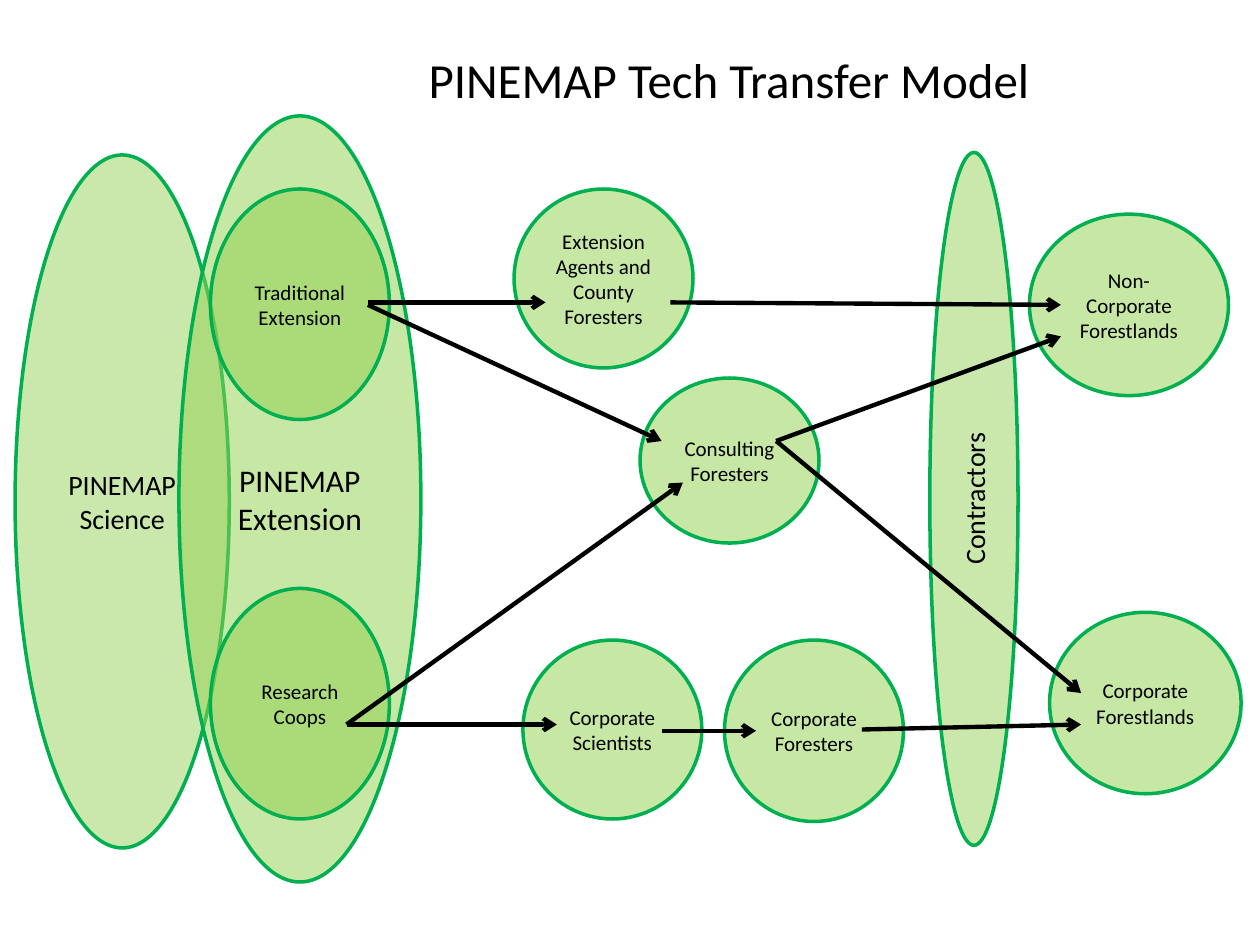
from lxml.etree import SubElement
from pptx import Presentation
from pptx.dml.color import RGBColor
from pptx.enum.shapes import MSO_CONNECTOR, MSO_SHAPE
from pptx.enum.text import MSO_ANCHOR, PP_ALIGN
from pptx.oxml.ns import qn
from pptx.util import Inches, Pt

COLORS = {"leaf": "92D050", "edge": "00B050", "ink": "000000"}
COLUMNS, ROWS = 10, 7.5


def rgb(name):
    return RGBColor.from_string(COLORS[name])


def write(sp, text, size=12, color="ink", font="Calibri", vert=None):
    tf = sp.text_frame
    tf.word_wrap = True
    tf.vertical_anchor = MSO_ANCHOR.MIDDLE
    if vert:
        tf._txBody.bodyPr.set("vert", vert)
    p = tf.paragraphs[0]
    p.alignment = PP_ALIGN.CENTER
    r = p.add_run()
    r.text = text
    r.font.size = Pt(size)
    r.font.name = font
    r.font.color.rgb = rgb(color)


class Diagram:
    """Style and current slide; lengths are grid columns and rows."""

    def __init__(self, prs):
        self.slide = prs.slides.add_slide(prs.slide_layouts[6])
        self.col = prs.slide_width / COLUMNS
        self.row = prs.slide_height / ROWS
        self.edge_width = Pt(2)
        self.arrow_width = Pt(2.5)

    def place(self, x, y):
        return round(x * self.col), round(y * self.row)

    def title(self, text, x, y, w, h, size=28):
        sp = self.slide.shapes.add_textbox(*self.place(x, y), *self.place(w, h))
        write(sp, text, size=size)

    def ellipse(self, text, x, y, w, h, opacity=51, **style):
        sp = self.slide.shapes.add_shape(
            MSO_SHAPE.OVAL, *self.place(x, y), *self.place(w, h))
        sp.shadow.inherit = False
        sp.fill.solid()
        sp.fill.fore_color.rgb = rgb("leaf")
        color = sp.fill._xPr.find(".//" + qn("a:srgbClr"))
        SubElement(color, qn("a:alpha"), val=str(opacity * 1000))
        sp.line.color.rgb = rgb("edge")
        sp.line.width = self.edge_width
        write(sp, text, **style)

    def arrow(self, start, end):
        cn = self.slide.shapes.add_connector(
            MSO_CONNECTOR.STRAIGHT, *self.place(*start), *self.place(*end))
        cn.line.color.rgb = rgb("ink")
        cn.line.width = self.arrow_width
        SubElement(cn.line._get_or_add_ln(), qn("a:tailEnd"), type="arrow")
        SubElement(cn._element.spPr, qn("a:effectLst"))


def main():
    prs = Presentation()
    prs.slide_width, prs.slide_height = Inches(10), Inches(7.5)
    d = Diagram(prs)

    d.ellipse("PINEMAP Science", 0.12, 1.23, 1.7, 5.5, opacity=47, size=16)
    d.ellipse("PINEMAP Extension", 1.42, 0.92, 1.92, 6.08, size=18)

    node = 1.42
    for text, x, y, h in (
        ("Traditional Extension", 1.67, 1.5, 1.83),
        ("Research Coops", 1.67, 4.67, 1.83),
        ("Extension Agents and County Foresters", 4.08, 1.5, node),
        ("Corporate Scientists", 4.15, 5.08, node),
        ("Corporate Foresters", 5.75, 5.08, 1.44),
        ("Consulting Foresters", 5.08, 3, 1.31),
    ):
        d.ellipse(text, x, y, node, h)

    d.ellipse("Contractors", 7.38, 1.21, 0.7, 5.5, opacity=47, size=16,
              vert="vert270")
    d.ellipse("Non-Corporate Forestlands", 8.17, 1.7, 1.58, 1.44)
    d.ellipse("Corporate Forestlands", 8.33, 4.86, 1.52, 1.44)
    d.title("PINEMAP Tech Transfer Model", 2.88, 0, 5.81, 1.25)

    coops, consulting = (2.75, 5.75), (6.16, 3.5)
    for start, end in (
        (coops, (4.42, 5.75)),
        (coops, (5.42, 3.83)),
        ((5.25, 5.8), (6, 5.8)),
        ((6.84, 5.79), (8.58, 5.75)),
        (consulting, (8.42, 2.67)),
        (consulting, (8.58, 5.5)),
        ((2.92, 2.4), (4.33, 2.4)),
        ((2.92, 2.42), (5.25, 3.5)),
        ((5.32, 2.4), (8.42, 2.42)),
    ):
        d.arrow(start, end)

    prs.save("out.pptx")


if __name__ == "__main__":
    main()
